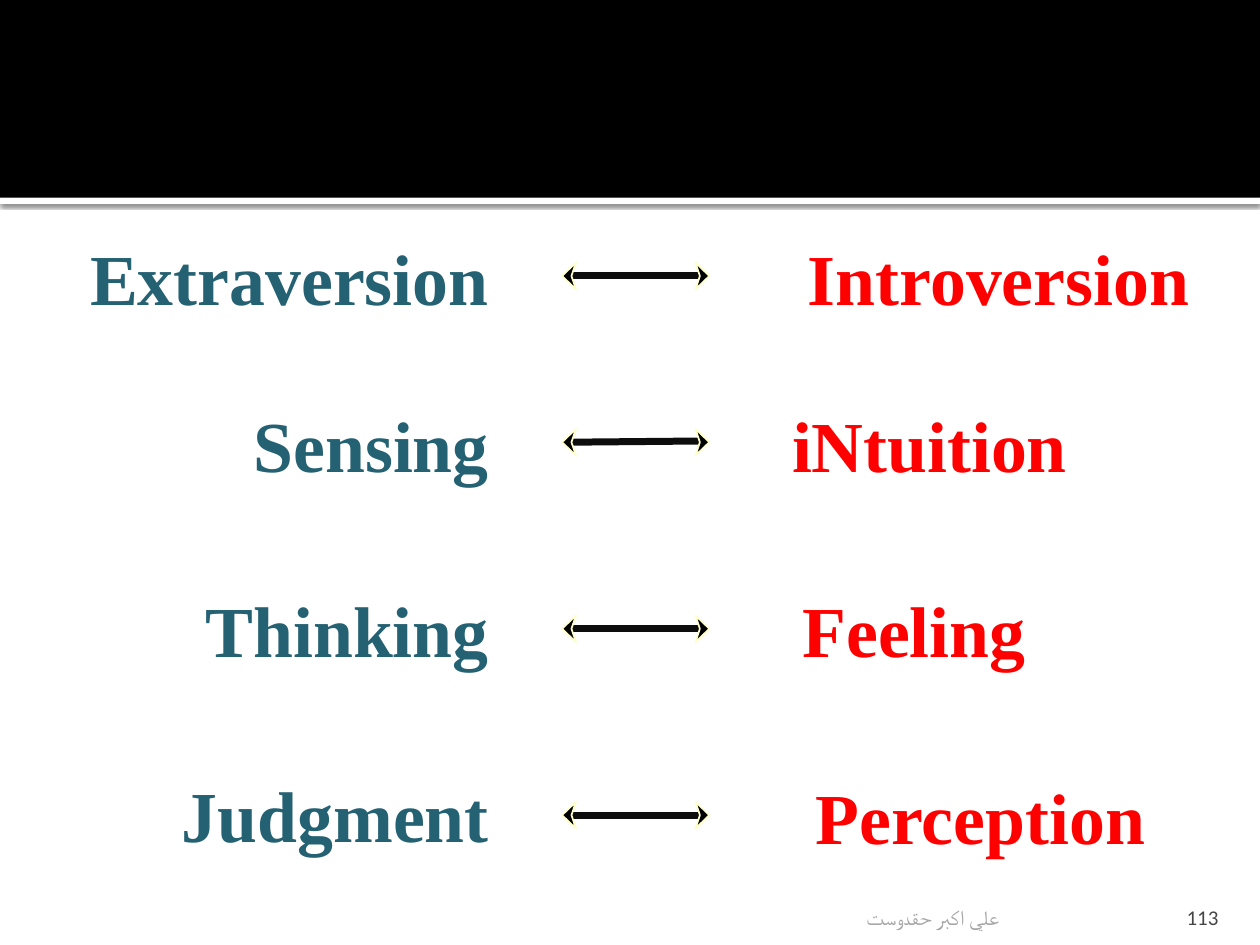
from dataclasses import dataclass

from lxml import etree
from pptx import Presentation
from pptx.dml.color import RGBColor
from pptx.enum import shapes, text
from pptx.oxml import parse_xml
from pptx.oxml.ns import nsdecls, qn
from pptx.util import Pt

COLORS = {
    "black": "000000", "white": "FFFFFF", "teal": "246172", "red": "FF0000",
    "shaft": "0D0D0D", "outline": "FFFFCC", "footer": "A6A6A6", "number": "454545",
}
LEFT_EDGE = 286.6  # shared right edge of the left-hand words
ARROW_CENTER = 363.3
TIP, BACK, NOTCH, HALF_HEIGHT = 42.1, 34.1, 36.7, 7.7


@dataclass(frozen=True)
class Pair:
    """Two opposite preferences joined by a double arrow."""
    left: str
    left_width: float
    right: str
    right_x: float
    right_width: float
    top: float
    right_drop: float = 0
    tilt: float = 0


PAIRS = [
    Pair("Extraversion", 244.8, "Introversion", 452.2, 234.7, 130.3),
    Pair("Sensing", 150.5, "iNtuition", 443.5, 173.5, 225.4, tilt=-0.7),
    Pair("Thinking", 177.8, "Feeling", 450, 143.3, 331.2),
    Pair("Judgment", 191.5, "Perception", 457.2, 204.5, 437, right_drop=1),
]
ARROW_YS = [157.7, 252.7, 359.3, 465.8]


def color(name: str) -> RGBColor:
    return RGBColor.from_string(COLORS[name])


def add_band(slide, top: float, height: float, fill: str):
    shape = slide.shapes.add_shape(
        shapes.MSO_SHAPE.RECTANGLE, 0, Pt(top), Pt(720), Pt(height))
    shape.shadow.inherit = False
    shape.fill.solid()
    shape.fill.fore_color.rgb = color(fill)
    shape.line.fill.background()
    return shape


def add_shadow(shape) -> None:
    effects = shape._element.spPr.find(qn("a:effectLst"))
    effects.append(parse_xml(
        f'<a:outerShdw {nsdecls("a")} blurRad="{Pt(2.5)}" dist="{Pt(0.8)}" '
        'dir="5400000" algn="tl" rotWithShape="0">'
        f'<a:srgbClr val="{COLORS["black"]}"><a:alpha val="60000"/></a:srgbClr>'
        '</a:outerShdw>'))


def add_text(slide, words: str, *, left: float, top: float, width: float,
             height: float, size: float, font: str, fill: str,
             bold: bool = False, wrap: bool = True, rtl: bool = False,
             anchor=text.MSO_ANCHOR.TOP, side: float = 7.2,
             bottom: float = 3.6) -> None:
    box = slide.shapes.add_textbox(Pt(left), Pt(top), Pt(width), Pt(height))
    frame = box.text_frame
    frame.word_wrap = wrap
    frame.auto_size = (text.MSO_AUTO_SIZE.NONE if wrap
                       else text.MSO_AUTO_SIZE.SHAPE_TO_FIT_TEXT)
    frame.vertical_anchor = anchor
    frame.margin_left = frame.margin_right = Pt(side)
    frame.margin_top, frame.margin_bottom = Pt(3.6), Pt(bottom)
    paragraph = frame.paragraphs[0]
    paragraph.alignment = text.PP_ALIGN.RIGHT
    if rtl:
        paragraph._p.get_or_add_pPr().set("rtl", "1")
    run = paragraph.add_run()
    run.text = words
    run.font.size, run.font.name, run.font.bold = Pt(size), font, bold
    run.font.color.rgb = color(fill)
    if rtl:
        etree.SubElement(run._r.get_or_add_rPr(), qn("a:cs")).set("typeface", font)


def add_arrow(slide, y: float, tilt: float) -> None:
    # Shaft
    shaft = slide.shapes.add_connector(
        shapes.MSO_CONNECTOR.STRAIGHT, Pt(ARROW_CENTER - NOTCH), Pt(y),
        Pt(ARROW_CENTER + NOTCH), Pt(y + tilt))
    shaft.line.width = Pt(4)
    shaft.line.color.rgb = color("shaft")
    etree.SubElement(shaft._element.spPr, qn("a:effectLst"))
    # Mirrored barbed heads
    for side in (-1, 1):
        back, tip, notch = (Pt(ARROW_CENTER + side * reach)
                            for reach in (BACK, TIP, NOTCH))
        builder = slide.shapes.build_freeform(back, Pt(y - HALF_HEIGHT))
        builder.add_line_segments(
            [(tip, Pt(y)), (back, Pt(y + HALF_HEIGHT)), (notch, Pt(y))], close=True)
        head = builder.convert_to_shape()
        head.shadow.inherit = False
        head.fill.solid()
        head.fill.fore_color.rgb = color("black")
        head.line.color.rgb = color("outline")
        head.line.width = Pt(1)


def main() -> None:
    presentation = Presentation()
    presentation.slide_width, presentation.slide_height = Pt(720), Pt(540)
    slide = presentation.slides.add_slide(presentation.slide_layouts[6])

    # Header bands
    add_shadow(add_band(slide, 113, 3.6, "white"))
    add_band(slide, 0, 113, "black")

    # Footer and slide number
    footer = dict(top=509.8, height=21.6, size=12, font="Calibri",
                  anchor=text.MSO_ANCHOR.BOTTOM, bottom=0)
    add_text(slide, "علي اكبر حقدوست", left=135.4, width=439.2, side=3.6,
             fill="footer", rtl=True, **footer)
    add_text(slide, "113", left=645.8, width=57.6, fill="number", **footer)

    # Opposite pairs
    word = dict(height=56.9, size=41, font="Times New Roman", bold=True, wrap=False)
    for pair, y in zip(PAIRS, ARROW_YS):
        add_text(slide, pair.left, left=LEFT_EDGE - pair.left_width, top=pair.top,
                 width=pair.left_width, fill="teal", **word)
        add_arrow(slide, y, pair.tilt)
        add_text(slide, pair.right, left=pair.right_x, top=pair.top + pair.right_drop,
                 width=pair.right_width, fill="red", **word)

    presentation.save("out.pptx")


if __name__ == "__main__":
    main()
